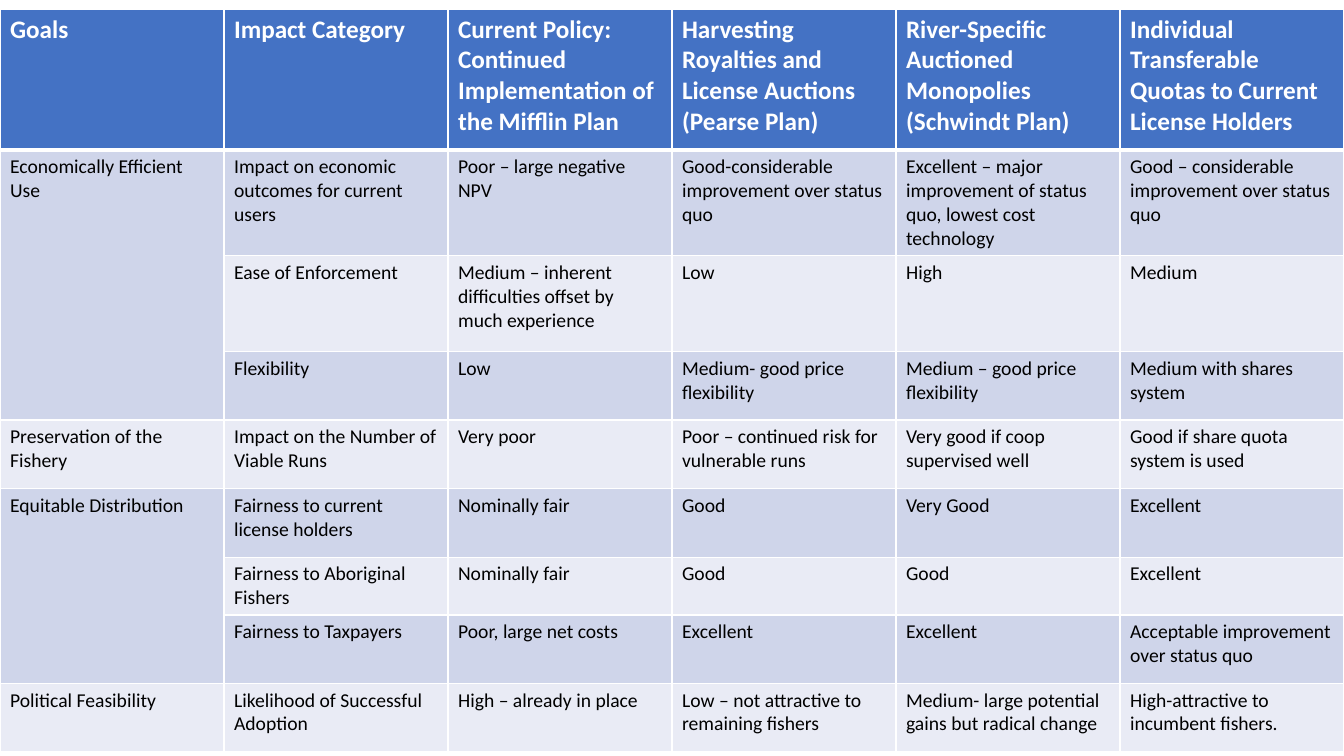
import pptx
import pptx.util
import pptx.dml.color
import lxml.etree

RGBColor = pptx.dml.color.RGBColor
BLUE = RGBColor(0x44, 0x72, 0xC4)
BAND_DARK = RGBColor(0xCF, 0xD5, 0xEA)
BAND_LIGHT = RGBColor(0xE9, 0xEB, 0xF5)
WHITE = RGBColor(0xFF, 0xFF, 0xFF)
BLACK = RGBColor(0, 0, 0)
FONT = "Calibri"

HEADER = (
    "Goals",
    "Impact Category",
    "Current Policy: Continued Implementation of the Mifflin Plan",
    "Harvesting Royalties and License Auctions (Pearse Plan)",
    "River-Specific Auctioned Monopolies (Schwindt Plan)",
    "Individual Transferable Quotas to Current License Holders",
)
GOALS = [
    ("Economically Efficient Use", [
        ("Impact on economic outcomes for current users",
         "Poor – large negative NPV",
         "Good-considerable improvement over status quo",
         "Excellent – major improvement of status quo, lowest cost technology",
         "Good – considerable improvement over status quo"),
        ("Ease of Enforcement",
         "Medium – inherent difficulties offset by much experience",
         "Low", "High", "Medium"),
        ("Flexibility", "Low",
         "Medium- good price flexibility",
         "Medium – good price flexibility",
         "Medium with shares system"),
    ]),
    ("Preservation of the Fishery", [
        ("Impact on the Number of Viable Runs", "Very poor",
         "Poor – continued risk for vulnerable runs",
         "Very good if coop supervised well",
         "Good if share quota system is used"),
    ]),
    ("Equitable Distribution", [
        ("Fairness to current license holders",
         "Nominally fair", "Good", "Very Good", "Excellent"),
        ("Fairness to Aboriginal Fishers",
         "Nominally fair", "Good", "Good", "Excellent"),
        ("Fairness to Taxpayers",
         "Poor, large net costs", "Excellent", "Excellent",
         "Acceptable improvement over status quo"),
    ]),
    ("Political Feasibility", [
        ("Likelihood of Successful Adoption",
         "High – already in place",
         "Low – not attractive to remaining fishers",
         "Medium- large potential gains but radical change",
         "High-attractive to incumbent fishers."),
    ]),
]
ROW_HEIGHTS = (1.4, 0.95, 0.95, 0.68, 0.68, 0.68, 0.55, 0.68, 0.68)
TABLE_TOP = 0.09


def set_borders(cell, bottom):
    tc_pr = cell._tc.get_or_add_tcPr()
    ns = pptx.oxml.ns.qn
    for side, width in (("L", 1), ("R", 1), ("T", 1), ("B", bottom)):
        ln = lxml.etree.SubElement(tc_pr, ns("a:ln" + side), w=str(pptx.util.Pt(width)))
        fill = lxml.etree.SubElement(ln, ns("a:solidFill"))
        lxml.etree.SubElement(fill, ns("a:srgbClr"), val=str(WHITE))


def style_cell(cell, row):
    header = row == 0
    set_borders(cell, 3 if header else 1)
    cell.fill.solid()
    cell.fill.fore_color.rgb = BLUE if header else BAND_DARK if row % 2 else BAND_LIGHT
    for r in cell.text_frame.paragraphs[0].runs:
        r.font.name = FONT
        r.font.size = pptx.util.Pt(18 if header else 14)
        r.font.bold = header
        r.font.color.rgb = WHITE if header else BLACK


def main():
    prs = pptx.Presentation()
    prs.slide_width = pptx.util.Inches(13.33)
    prs.slide_height = pptx.util.Inches(7.5)
    s = prs.slides.add_slide(prs.slide_layouts[6])

    rows = [HEADER]
    spans = []
    for goal, impacts in GOALS:
        spans.append((len(rows), len(impacts)))
        for i, impact in enumerate(impacts):
            rows.append(("" if i else goal,) + impact)

    table = s.shapes.add_table(
        len(rows), len(HEADER), 0, pptx.util.Inches(TABLE_TOP),
        prs.slide_width, pptx.util.Inches(sum(ROW_HEIGHTS))).table
    for column in table.columns:
        column.width = prs.slide_width // len(HEADER)
    for row, height in zip(table.rows, ROW_HEIGHTS):
        row.height = pptx.util.Inches(height)

    for i, texts in enumerate(rows):
        for j, text in enumerate(texts):
            cell = table.cell(i, j)
            if text:
                cell.text_frame.text = text
            style_cell(cell, i)
    for first, count in spans:
        if count > 1:
            table.cell(first, 0).merge(table.cell(first + count - 1, 0))

    prs.save("out.pptx")


if __name__ == "__main__":
    main()
